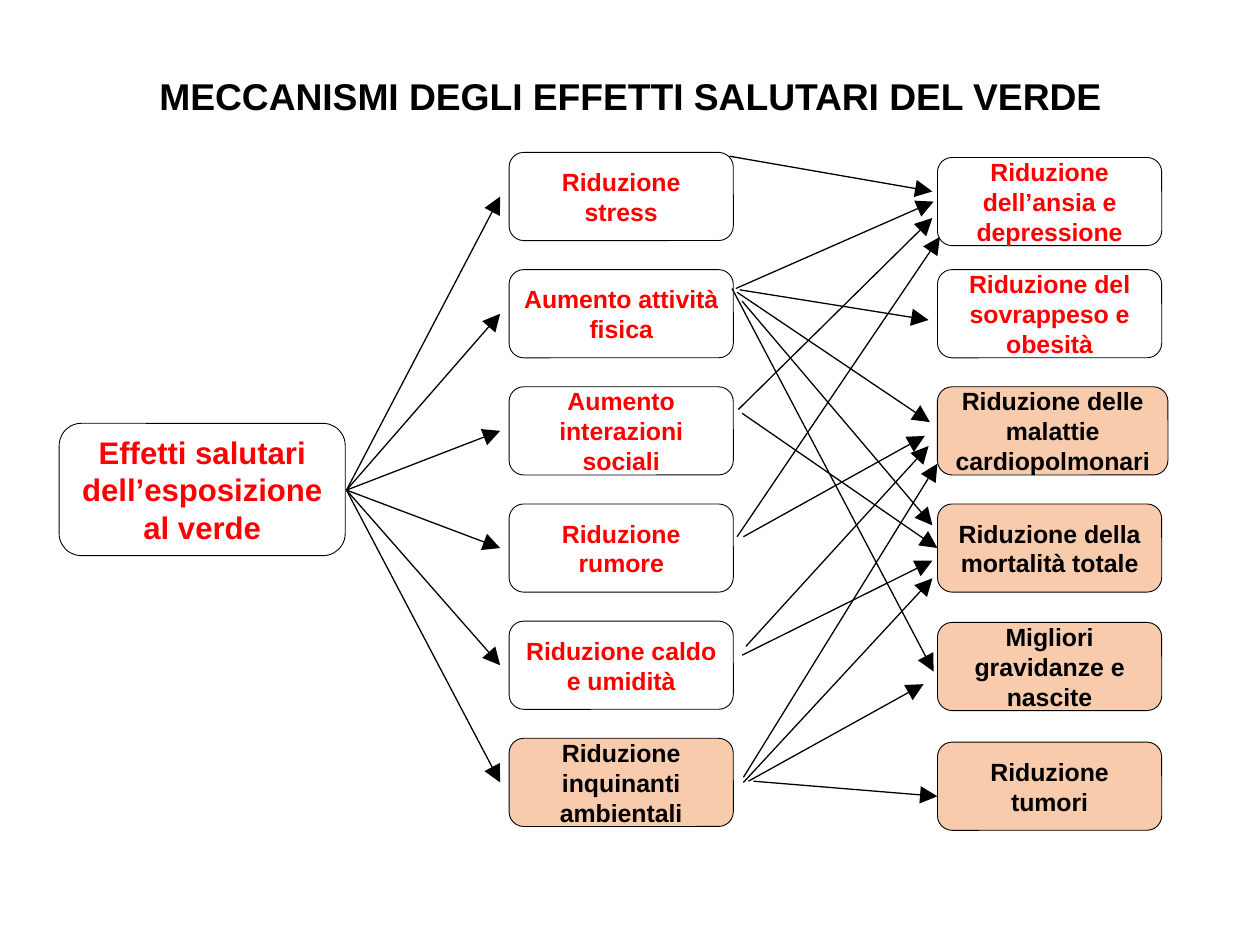
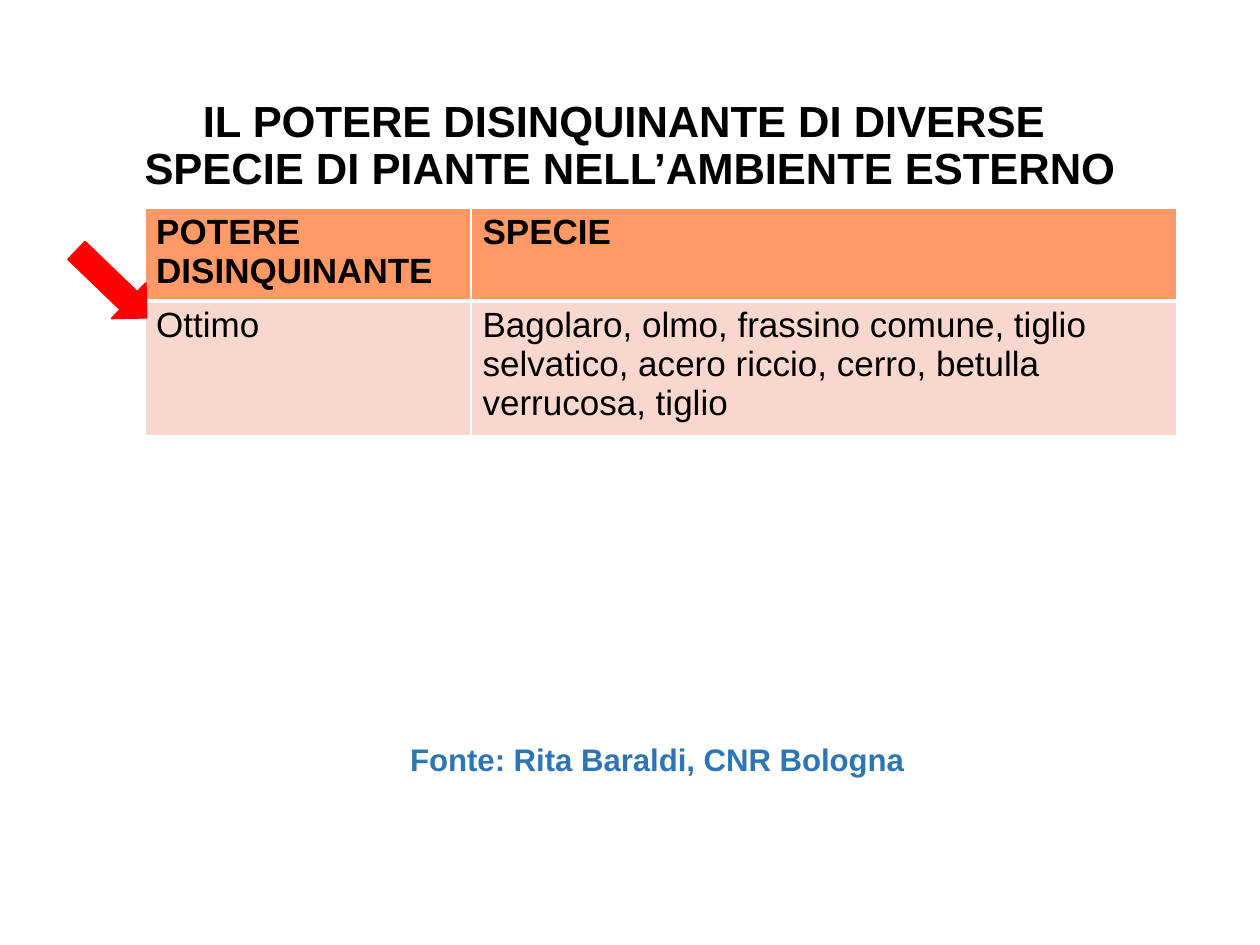
from lxml.etree import SubElement
from pptx import Presentation
from pptx.dml.color import RGBColor
from pptx.enum.shapes import MSO_CONNECTOR, MSO_SHAPE
from pptx.enum.text import MSO_ANCHOR, MSO_AUTO_SIZE, PP_ALIGN
from pptx.oxml.ns import qn
from pptx.util import Inches, Pt

BLACK = RGBColor(0x00, 0x00, 0x00)
WHITE = RGBColor(0xFF, 0xFF, 0xFF)
RED = RGBColor(0xFF, 0x00, 0x00)
PEACH = RGBColor(0xF8, 0xCB, 0xAD)
ORANGE = RGBColor(0xFF, 0x99, 0x66)
PINK = RGBColor(0xF8, 0xD7, 0xCE)
BLUE = RGBColor(0x2E, 0x75, 0xB6)

BOX_WIDTH, BOX_HEIGHT = 1.78, 0.7
MECHANISM_LEFT, MECHANISM_TOP, MECHANISM_STEP = 4.04, 1.21, 0.93
OUTCOME_LEFT = 7.44
SOURCE_POINT = (2.75, 3.89)

# Text, and whether the box is highlighted
MECHANISMS = [
    ("Riduzione stress", False),
    ("Aumento attività fisica", False),
    ("Aumento interazioni sociali", False),
    ("Riduzione rumore", False),
    ("Riduzione caldo e umidità", False),
    ("Riduzione inquinanti ambientali", True),
]
# Text, top, width, and whether the box is highlighted
OUTCOMES = [
    ("Riduzione dell’ansia e depressione", 1.25, BOX_WIDTH, False),
    ("Riduzione del sovrappeso e obesità", 2.14, BOX_WIDTH, False),
    ("Riduzione delle malattie cardiopolmonari", 3.07, 1.83, True),
    ("Riduzione della mortalità totale", 4, BOX_WIDTH, True),
    ("Migliori gravidanze e nascite", 4.94, BOX_WIDTH, True),
    ("Riduzione tumori", 5.89, BOX_WIDTH, True),
]
# Start and end of each arrow, grouped by mechanism
OUTCOME_ARROWS = [
    # Stress
    ((5.79, 1.24), (7.4, 1.52)),
    # Physical activity
    ((5.84, 2.29), (7.41, 1.6)),
    ((5.87, 2.3), (7.37, 2.54)),
    ((5.85, 2.32), (7.38, 3.35)),
    ((5.89, 2.39), (7.4, 4.17)),
    ((5.81, 2.29), (7.41, 5.33)),
    # Social interaction
    ((5.86, 3.25), (7.4, 1.73)),
    ((5.89, 3.28), (7.44, 4.35)),
    # Noise
    ((5.85, 4.26), (7.46, 1.88)),
    ((5.9, 4.26), (7.34, 3.46)),
    # Heat and humidity
    ((5.92, 5.13), (7.37, 3.54)),
    ((5.89, 5.2), (7.4, 4.45)),
    # Pollutants
    ((5.9, 6.17), (7.44, 3.68)),
    ((5.9, 6.21), (7.4, 4.59)),
    ((5.94, 6.2), (7.33, 5.43)),
    ((5.98, 6.2), (7.44, 6.32)),
]
SPECIES_ROWS = [
    ("POTERE DISINQUINANTE", "SPECIE"),
    ("Ottimo", "Bagolaro, olmo, frassino comune, tiglio selvatico, "
               "acero riccio, cerro, betulla verrucosa, tiglio"),
]


class Deck:
    """Holds the shared style and the current slide."""

    font_name = "Arial"

    def __init__(self):
        self.presentation = Presentation()
        self.presentation.slide_width = Inches(10)
        self.presentation.slide_height = Inches(7.5)
        self.slide = None

    def add_slide(self):
        self.slide = self.presentation.slides.add_slide(
            self.presentation.slide_layouts.get_by_name("Title Only"))

    def add_text(self, frame, lines, size, color=BLACK, bold=True,
                 align=PP_ALIGN.CENTER):
        paragraph = frame.paragraphs[0]
        paragraph.alignment = align
        for index, line in enumerate(lines):
            if index:
                paragraph.add_line_break()
            run = paragraph.add_run()
            run.text = line
            run.font.name = self.font_name
            run.font.size = Pt(size)
            run.font.bold = bold
            run.font.color.rgb = color
        return paragraph

    def title(self, lines, place, size, anchor, spacing=1.0, wrap=True):
        shape = self.slide.shapes.title
        shape.left, shape.top, shape.width, shape.height = map(Inches, place)
        frame = shape.text_frame
        frame.auto_size = MSO_AUTO_SIZE.NONE
        frame.word_wrap = wrap
        frame.vertical_anchor = anchor
        self.add_text(frame, lines, size).line_spacing = spacing

    def shape(self, kind, place, fill, line, line_width):
        shape = self.slide.shapes.add_shape(kind, *map(Inches, place))
        shape.shadow.inherit = False
        if fill is None:
            shape.fill.background()
        else:
            shape.fill.solid()
            shape.fill.fore_color.rgb = fill
        shape.line.color.rgb = line
        shape.line.width = Pt(line_width)
        return shape

    def box(self, text, place, highlighted=False, size=14.2):
        shape = self.shape(MSO_SHAPE.ROUNDED_RECTANGLE, place,
                           PEACH if highlighted else None, BLACK, 0.5)
        frame = shape.text_frame
        frame.word_wrap = True
        frame.vertical_anchor = MSO_ANCHOR.MIDDLE
        frame.margin_left = frame.margin_right = Inches(0.08)
        self.add_text(frame, [text], size, BLACK if highlighted else RED)

    def arrow(self, start, end):
        connector = self.slide.shapes.add_connector(
            MSO_CONNECTOR.STRAIGHT, *map(Inches, start + end))
        connector.line.color.rgb = BLACK
        connector.line.width = Pt(0.75)
        properties = connector._element.spPr
        SubElement(properties.find(qn("a:ln")), qn("a:tailEnd"),
                   type="triangle", w="lg", len="lg")
        SubElement(properties, qn("a:effectLst"))

    def text_box(self, text, place, size, color):
        frame = self.slide.shapes.add_textbox(*map(Inches, place)).text_frame
        frame.word_wrap = True
        self.add_text(frame, [text], size, color)

    def borders(self, cell, top_width, bottom_width):
        properties = cell._tc.get_or_add_tcPr()
        widths = {"L": 1, "R": 1, "T": top_width, "B": bottom_width}
        for side, width in widths.items():
            line = SubElement(properties, qn(f"a:ln{side}"), w=str(Pt(width)))
            fill = SubElement(line, qn("a:solidFill"))
            SubElement(fill, qn("a:srgbClr"), val=str(WHITE))

    def table(self, rows, place, column_widths, row_heights):
        table = self.slide.shapes.add_table(
            len(rows), len(column_widths), *map(Inches, place)).table
        for column, width in zip(table.columns, column_widths):
            column.width = Inches(width)
        for row_index, (texts, height) in enumerate(zip(rows, row_heights)):
            table.rows[row_index].height = Inches(height)
            header = row_index == 0
            for column_index, text in enumerate(texts):
                cell = table.cell(row_index, column_index)
                cell.margin_left = cell.margin_right = Inches(0.09)
                cell.margin_top = cell.margin_bottom = Inches(0.04)
                # A heavy line separates the header from the body
                self.borders(cell, 3 if row_index == 1 else 1, 3 if header else 1)
                cell.fill.solid()
                cell.fill.fore_color.rgb = ORANGE if header else PINK
                self.add_text(cell.text_frame, [text], 20, bold=header,
                              align=PP_ALIGN.LEFT)


def build_mechanisms(deck):
    deck.add_slide()
    deck.title(["MECCANISMI DEGLI EFFETTI SALUTARI DEL VERDE"],
               (1.12, 0.53, 7.77, 0.46), 21.3, MSO_ANCHOR.TOP, wrap=False)

    # Boxes, from cause to outcome
    deck.box("Effetti salutari dell’esposizione al verde",
             (0.47, 3.36, 2.27, 1.05), size=17.8)
    for index, (text, highlighted) in enumerate(MECHANISMS):
        top = MECHANISM_TOP + index * MECHANISM_STEP
        deck.box(text, (MECHANISM_LEFT, top, BOX_WIDTH, BOX_HEIGHT), highlighted)
    for text, top, width, highlighted in OUTCOMES:
        deck.box(text, (OUTCOME_LEFT, top, width, BOX_HEIGHT), highlighted)

    # Arrows
    for index in range(len(MECHANISMS)):
        middle = MECHANISM_TOP + index * MECHANISM_STEP + BOX_HEIGHT / 2
        deck.arrow(SOURCE_POINT, (3.97, middle))
    for start, end in OUTCOME_ARROWS:
        deck.arrow(start, end)


def build_species(deck):
    deck.add_slide()
    deck.title(["IL POTERE DISINQUINANTE DI DIVERSE ",
                "SPECIE DI PIANTE NELL’AMBIENTE ESTERNO"],
               (0.5, 0.61, 9, 1.11), 24.9, MSO_ANCHOR.MIDDLE, spacing=0.9)
    deck.table(SPECIES_ROWS, (1.15, 1.65, 8.19, 1.81), (2.59, 5.6), (0.74, 1.07))
    deck.text_box("Fonte: Rita Baraldi, CNR Bologna",
                  (2.67, 5.83, 5.09, 0.4), 17.8, BLUE)
    pointer = deck.shape(MSO_SHAPE.RIGHT_ARROW, (0.5, 2.06, 0.77, 0.39),
                         RED, RED, 1)
    pointer.rotation = 43.9


def main():
    deck = Deck()
    build_mechanisms(deck)
    build_species(deck)
    deck.presentation.save("out.pptx")


if __name__ == "__main__":
    main()
